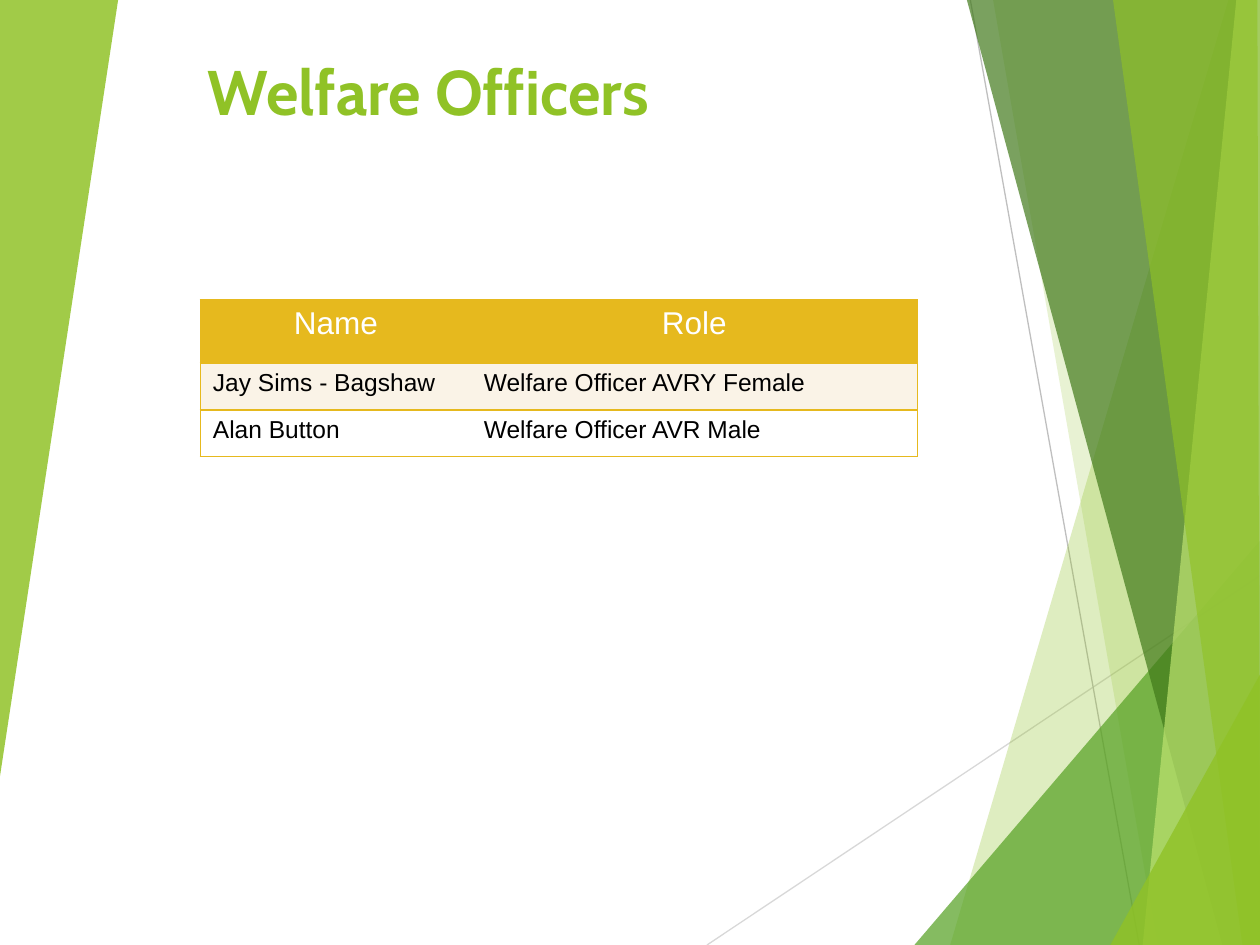
from lxml.etree import SubElement
from pptx import Presentation
from pptx.dml.color import RGBColor as Rgb
from pptx.enum.shapes import MSO_CONNECTOR as Connector
from pptx.enum.text import MSO_ANCHOR as Anchor, PP_ALIGN as Align
from pptx.oxml.ns import qn
from pptx.util import Pt

COLORS = {
    "lime": "90C226", "green": "54A021", "forest": "3F7818", "pale": "BFE471",
    "gold": "E6B91E", "cream": "FAF3E7", "white": "FFFFFF", "black": "000000",
    "silver": "D8D8D8", "gray": "BFBFBF",
}
WIDTH, HEIGHT = 720, 540
RAYS = [("silver", (404, HEIGHT), (WIDTH, 329)), ("gray", (554.5, 0), (651, HEIGHT))]
SHARDS = [
    ("lime", 29, [(702, 0), (543, HEIGHT), (WIDTH, HEIGHT), (WIDTH, 0)]),
    ("lime", 20, [(567.5, 0), (661.5, HEIGHT), (WIDTH, HEIGHT), (WIDTH, 0)]),
    ("green", 71, [(522.5, HEIGHT), (WIDTH, 309), (WIDTH, HEIGHT)]),
    ("forest", 69, [(552.5, 0), (698.5, HEIGHT), (WIDTH, HEIGHT), (WIDTH, 0)]),
    ("pale", 69, [(706.5, 0), (653, HEIGHT), (WIDTH, HEIGHT), (WIDTH, 0)]),
    ("lime", 64, [(636, 0), (710, HEIGHT), (WIDTH, HEIGHT), (718.5, 0)]),
    ("lime", 80, [(634.5, HEIGHT), (WIDTH, 385.5), (WIDTH, HEIGHT)]),
    ("lime", 84, [(0, 0), (67.5, 0), (0, 443.5)]),
]
OFFICERS = [
    ("Name", "Role"),
    ("Jay Sims - Bagshaw", "Welfare Officer AVRY Female"),
    ("Alan Button", "Welfare Officer AVR Male"),
]
ROW_FILLS = ["gold", "cream", "white"]
TITLE_FONT = {"name": "Cabin", "size": Pt(36), "bold": True}
HEADER_FONT = {"name": "Arial", "size": Pt(18), "bold": False}
BODY_FONT = {"name": "Arial", "size": Pt(14), "bold": False}


class Deck:
    """Holds the style and the current slide, and draws each kind of element."""

    def __init__(self):
        self.deck = Presentation()
        self.deck.slide_width, self.deck.slide_height = Pt(WIDTH), Pt(HEIGHT)
        self.slide = self.deck.slides.add_slide(self.deck.slide_layouts[5])
        self.shapes = self.slide.shapes

    def color(self, name):
        return Rgb.from_string(COLORS[name])

    def fill(self, part, color):
        part.fill.solid()
        part.fill.fore_color.rgb = self.color(color)

    def label(self, frame, text, font, color, align):
        frame.text = text
        paragraph = frame.paragraphs[0]
        paragraph.alignment = align
        for key, value in font.items():
            setattr(paragraph.runs[0].font, key, value)
        paragraph.runs[0].font.color.rgb = self.color(color)

    def title(self, text, left, top, width, height):
        heading = self.shapes.title
        place = {"left": left, "top": top, "width": width, "height": height}
        for key, value in place.items():
            setattr(heading, key, Pt(value))
        heading.text_frame.vertical_anchor = Anchor.BOTTOM
        self.label(heading.text_frame, text, TITLE_FONT, "lime", Align.LEFT)

    def ray(self, color, start, end):
        ray = self.shapes.add_connector(Connector.STRAIGHT, *map(Pt, start + end))
        ray.line.color.rgb = self.color(color)
        ray.line.width = Pt(0.75)
        SubElement(ray._element.spPr, qn("a:effectLst"))

    def shard(self, color, opacity, corners):
        start, *others = [(Pt(x), Pt(y)) for x, y in corners]
        outline = self.shapes.build_freeform(*start)
        outline.add_line_segments(others, close=True)
        shard = outline.convert_to_shape()
        shard.shadow.inherit = False
        shard.line.fill.background()
        self.fill(shard, color)
        tint = shard._element.spPr.find(qn("a:solidFill"))[0]
        SubElement(tint, qn("a:alpha"), val=str(opacity * 1000))

    def borders(self, cell, inner):
        properties = cell._tc.get_or_add_tcPr()
        for side in "LRTB":
            edge = SubElement(properties, qn(f"a:ln{side}"), w=str(Pt(1)))
            if side == inner:
                SubElement(edge, qn("a:noFill"))
            else:
                paint = SubElement(edge, qn("a:solidFill"))
                SubElement(paint, qn("a:srgbClr"), val=COLORS["gold"])

    def table(self, rows, left, top, widths, heights):
        size = map(Pt, (left, top, sum(widths), sum(heights)))
        table = self.shapes.add_table(len(rows), len(widths), *size).table
        for column, width in zip(table.columns, widths):
            column.width = Pt(width)
        for r, (row, height) in enumerate(zip(rows, heights)):
            table.rows[r].height = Pt(height)
            style = (BODY_FONT, "black", Align.LEFT) if r else (HEADER_FONT, "white", Align.CENTER)
            for c, text in enumerate(row):
                cell = table.cell(r, c)
                self.label(cell.text_frame, text, *style)
                self.borders(cell, "RL"[c])
                self.fill(cell, ROW_FILLS[r])

    def save(self):
        self.deck.save("out.pptx")


def main():
    deck = Deck()
    for ray in RAYS:
        deck.ray(*ray)
    for shard in SHARDS:
        deck.shard(*shard)
    deck.title("Welfare Officers", 111.6, 2.9, 607, 74.2)
    deck.table(OFFICERS, 114.5, 171.4, [154.8, 254.9], [36, 26.8, 26.8])
    deck.save()


if __name__ == "__main__":
    main()
